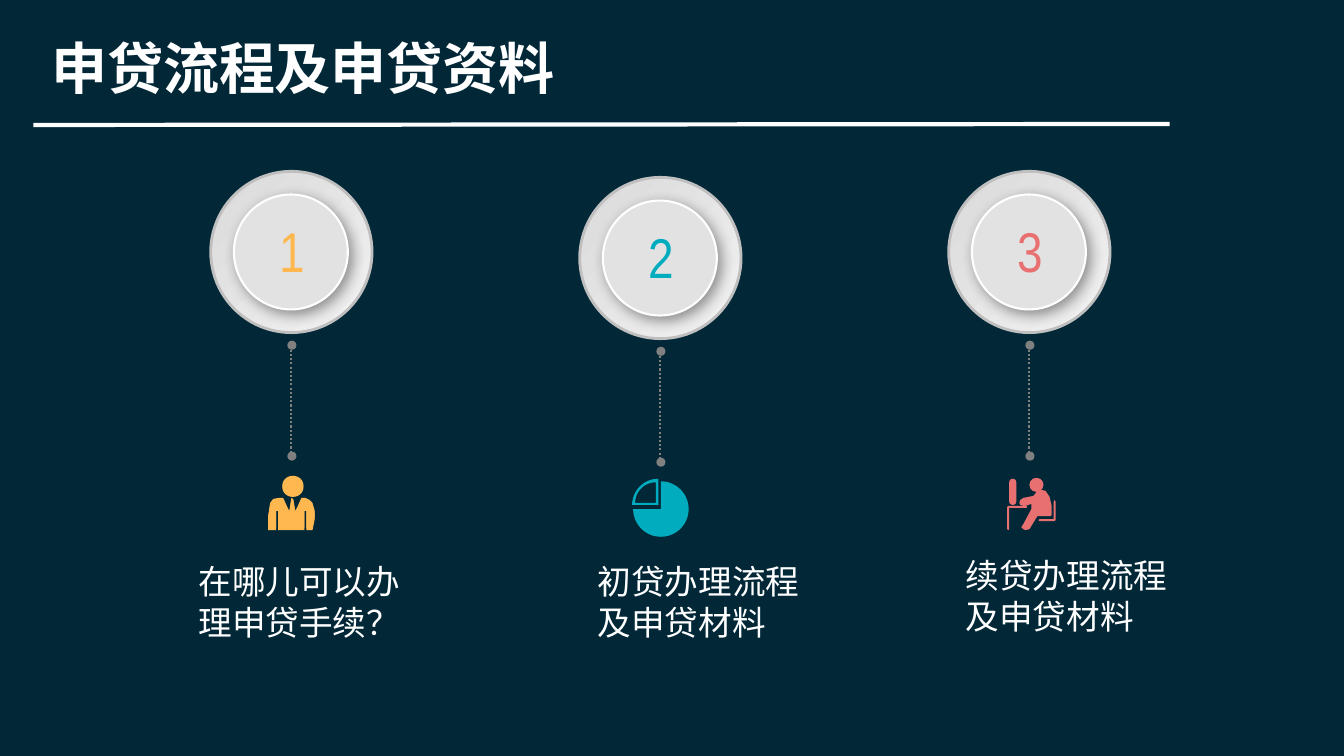
import math
from lxml import etree
from pptx import Presentation
from pptx import util as u
from pptx.dml import color
from pptx.enum import dml, shapes, text
from pptx.oxml import ns

WIDE, HIGH = 13.33, 7.5
SANS = "Noto Sans CJK SC"
WHITE, GREY = "FFFFFF", "808080"
OVAL = shapes.MSO_SHAPE.OVAL


def ink(code):
    return color.RGBColor.from_string(code)


def node(parent, tag, **attrs):
    return etree.SubElement(parent, ns.qn(tag), attrs)


def write(box, words, size=24, face=SANS, tint=WHITE, bold=False, align="LEFT", wrap=True):
    frame = box.text_frame
    frame.word_wrap = wrap
    frame.auto_size = text.MSO_AUTO_SIZE.NONE
    frame.vertical_anchor = text.MSO_ANCHOR.TOP
    line = frame.paragraphs[0]
    line.alignment = getattr(text.PP_ALIGN, align)
    run = line.add_run()
    run.text = words
    font = run.font
    font.name, font.size, font.bold = face, u.Pt(size), bold
    font.color.rgb = ink(tint)
    node(run._r.get_or_add_rPr(), "a:ea", typeface=face)


def label(slide, left, top, width, height, words, **style):
    box = slide.shapes.add_textbox(*map(u.Inches, (left, top, width, height)))
    write(box, words, **style)


def paint(item, fill, edge=None, width=1):
    item.shadow.inherit = False
    item.fill.solid()
    item.fill.fore_color.rgb = ink(fill)
    if edge:
        item.line.color.rgb = ink(edge)
        item.line.width = u.Pt(width)
    else:
        item.line.fill.background()
    return item


def form(slide, kind, left, top, width, height, *look):
    item = slide.shapes.add_shape(kind, *map(u.Inches, (left, top, width, height)))
    return paint(item, *look)


def rule(slide, start, end, tint, width, dash=None):
    line = slide.shapes.add_connector(
        shapes.MSO_CONNECTOR.STRAIGHT, *map(u.Inches, (*start, *end)))
    line.line.color.rgb = ink(tint)
    line.line.width = u.Pt(width)
    if dash:
        line.line.dash_style = dash
    node(line._element.spPr, "a:effectLst")


def trace(slide, left, top, tint, *loops):
    paths = [[(u.Inches(left + x / 100), u.Inches(top + y / 100)) for x, y in loop]
             for loop in loops]
    pen = slide.shapes.build_freeform(*paths[0][0], scale=1.0)
    for i, (first, *rest) in enumerate(paths):
        if i:
            pen.move_to(*first)
        pen.add_line_segments(rest, close=True)
    return paint(pen.convert_to_shape(), tint)


def wedge(x, y, radius, start, end):
    turns = [math.radians(a) for a in range(start, end + 1, 5)]
    return [(x, y)] + [(x + radius * math.cos(a), y + radius * math.sin(a)) for a in turns]


def clerk(slide, left, top, tint):
    left, top = left + 0.57, top + 3.02
    suit = [(0, 52), (0, 40), (2, 27), (5, 23), (10, 22), (15, 22), (19, 31), (21, 35),
            (23, 22), (25, 23), (27, 35), (29, 31), (33, 22), (37, 22), (41, 24),
            (44, 27), (46, 34), (46, 42), (44, 52), (38, 52), (38, 33), (36, 33),
            (36, 52), (10, 52), (10, 33), (8, 33), (8, 52)]
    for drop in (0.02, 0):
        form(slide, OVAL, left + 0.14, top + drop, 0.21, 0.19, tint)
        trace(slide, left, top + drop, tint, suit)


def chart(slide, left, top, tint):
    left, top = left + 0.52, top + 2.99
    trace(slide, left, top, tint, wedge(28.5, 30, 27.5, -90, 180))
    trace(slide, left, top, tint, wedge(26, 26, 26, 180, 270), wedge(23.5, 24, 20.5, 180, 270))


def desk(slide, left, top, tint):
    left, top = left + 0.58, top + 3.04
    table = [(0, 51), (0, 29), (1, 28), (19, 28), (20, 29), (19, 30), (2, 30), (2, 51), (1, 52)]
    body = [(16, 46), (14, 49), (16, 51), (18, 52), (22, 51), (30, 38), (43, 38), (44, 37),
            (44, 28), (42, 19), (38, 13), (34, 12), (30, 13), (26, 18), (16, 20), (13, 22),
            (12, 25), (13, 27), (16, 28), (18, 28), (24, 26), (24, 31)]
    chair = [(32, 41), (46, 41), (46, 24), (47, 22), (48, 24), (48, 42), (47, 43), (32, 43),
             (31, 42)]
    for loop in (table, body, chair):
        trace(slide, left, top, tint, loop)
    form(slide, OVAL, left + 0.22, top, 0.14, 0.14, tint)
    screen = form(slide, shapes.MSO_SHAPE.ROUNDED_RECTANGLE, left + 0.02, top + 0.01, 0.07, 0.26, tint)
    screen.adjustments[0] = 0.5


def badge(slide, left, top, words, tint):
    ring = form(slide, OVAL, left, top, 1.6, 1.6, "D9D9D9", "BFBFBF", 2)
    ring.fill.gradient()
    ring.fill.gradient_angle = 315
    for stop, code in zip(ring.fill.gradient_stops, ("D9D9D9", "F2F2F2")):
        stop.color.rgb = ink(code)
    disc = form(slide, OVAL, left + 0.23, top + 0.23, 1.13, 1.14, "E2E2E2", WHITE, 1.5)
    glow = node(disc._element.spPr.find(ns.qn("a:effectLst")), "a:outerShdw",
                blurRad=str(u.Pt(10)), dist=str(u.Pt(4)), dir="2700000", algn="tl", rotWithShape="0")
    node(node(glow, "a:srgbClr", val="000000"), "a:alpha", val="40000")
    label(slide, left + 0.34, top + 0.4, 0.93, 0.77, words,
          size=40, face="Arial Narrow", tint=tint, align="CENTER")


def stem(slide, left, top):
    mid = left + 0.8
    rule(slide, (mid, top + 1.77), (mid, top + 2.85), GREY, 1.5, dml.MSO_LINE.ROUND_DOT)
    for drop in (1.68, 2.78):
        form(slide, OVAL, mid - 0.04, top + drop, 0.09, 0.09, GREY)


def stage(slide, left, top, words, tint, icon, note, shift, drop):
    badge(slide, left, top, words, tint)
    stem(slide, left, top)
    icon(slide, left, top, tint)
    label(slide, left + shift, top + drop, 2.3, 0.91, note)


def header(slide, words):
    title = slide.shapes.title
    title.left, title.top, title.width, title.height = map(u.Inches, (0.38, 0.28, 5.25, 0.77))
    write(title, words, size=40, bold=True, align="CENTER", wrap=False)
    rule(slide, (0.33, 1.24), (11.6, 1.23), WHITE, 3)


def main():
    deck = Presentation()
    deck.slide_width, deck.slide_height = u.Inches(WIDE), u.Inches(HIGH)
    slide = deck.slides.add_slide(deck.slide_layouts[5])
    back = slide.background.fill
    back.solid()
    back.fore_color.rgb = ink("022838")
    header(slide, "申贷流程及申贷资料")
    stages = [
        (1.7, "FFB850", clerk, "在哪儿可以办理申贷手续？", -0.22, 3.82),
        (1.76, "01ACBE", chart, "初贷办理流程及申贷材料", 0.08, 3.76),
        (1.7, "E87071", desk, "续贷办理流程及申贷材料", 0.07, 3.76),
    ]
    for i, (top, tint, icon, note, shift, drop) in enumerate(stages):
        stage(slide, 2.09 + 3.66 * i, top, str(i + 1), tint, icon, note, shift, drop)
    deck.save("out.pptx")


if __name__ == "__main__":
    main()
